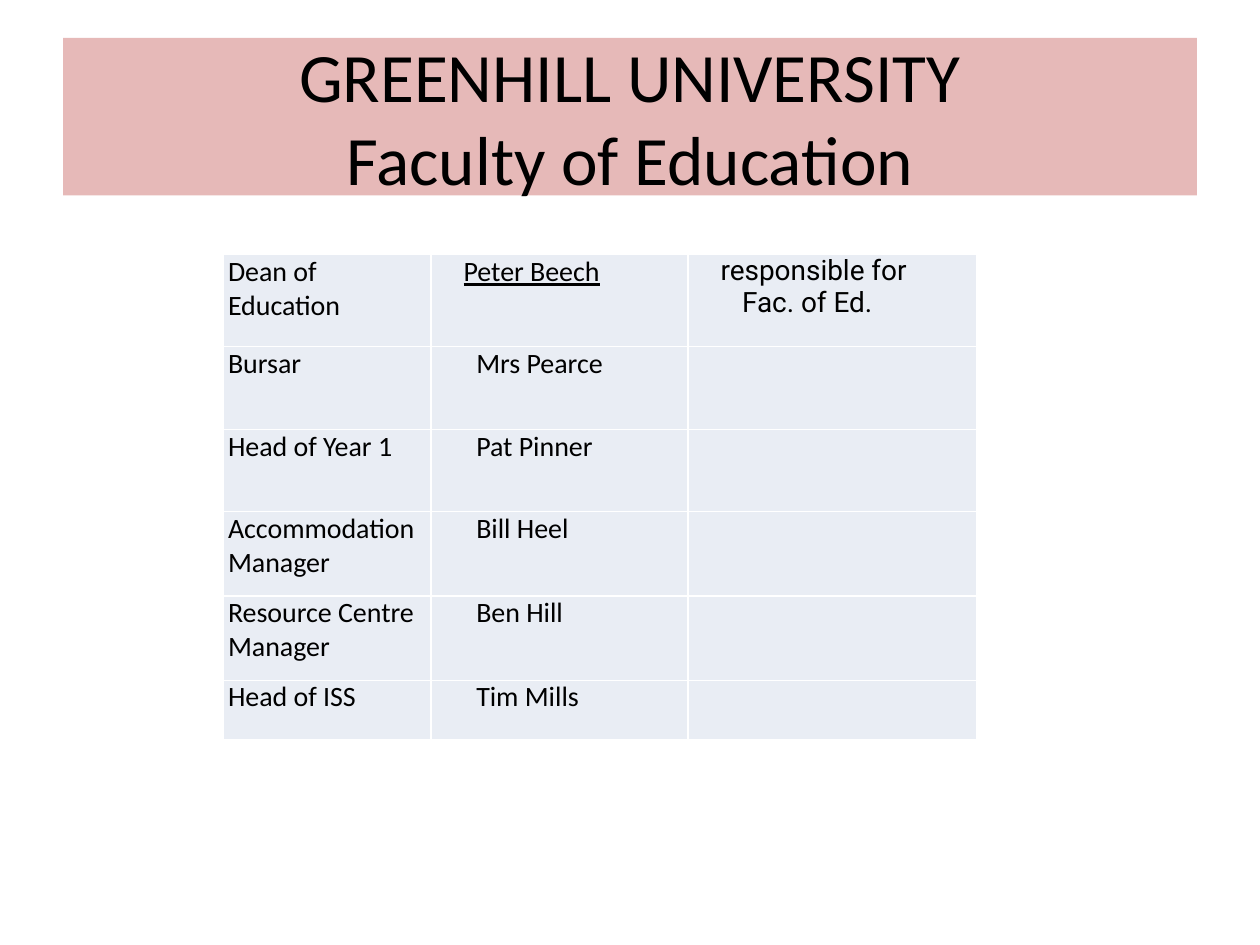
from dataclasses import dataclass

from pptx import Presentation
from pptx.dml.color import RGBColor
from pptx.enum.text import MSO_ANCHOR, MSO_AUTO_SIZE, PP_ALIGN
from pptx.util import Inches, Pt


@dataclass(frozen=True)
class Theme:
    banner: RGBColor = RGBColor.from_string("E6B9B8")
    cell: RGBColor = RGBColor.from_string("E9EDF4")
    ink: RGBColor = RGBColor.from_string("000000")
    font: str = "Calibri"
    note_font: str = "Roboto"
    title_size: float = 39.6
    cell_size: float = 16


THEME = Theme()
TITLE = "GREENHILL UNIVERSITY\vFaculty of Education"
STAFF = [
    ("Dean of Education", "Peter Beech"),
    ("Bursar", "Mrs Pearce"),
    ("Head of Year 1", "Pat Pinner"),
    ("Accommodation Manager", "Bill Heel"),
    ("Resource Centre Manager", "Ben Hill"),
    ("Head of ISS", "Tim Mills"),
]
DEAN_NOTE = [("responsible for", 0.25), ("Fac. of Ed.", 0.42)]
COLUMN_WIDTHS = [1.65, 2.04, 2.29]
ROW_HEIGHTS = [0.73, 0.66, 0.65, 0.67, 0.67, 0.47]
ROLE_INDENT, DEAN_INDENT, NAME_INDENT = 0.03, 0.25, 0.35


def style(paragraph, size, font=THEME.font):
    paragraph.font.name = font
    paragraph.font.size = Pt(size)
    paragraph.font.color.rgb = THEME.ink


def add_title(page):
    title = page.shapes.title
    title.left, title.top = Inches(0.5), Inches(0.3)
    title.width, title.height = Inches(9), Inches(1.25)
    title.fill.solid()
    title.fill.fore_color.rgb = THEME.banner
    frame = title.text_frame
    frame.text = TITLE
    frame.auto_size = MSO_AUTO_SIZE.NONE
    frame.vertical_anchor = MSO_ANCHOR.MIDDLE
    paragraph = frame.paragraphs[0]
    paragraph.alignment = PP_ALIGN.CENTER
    style(paragraph, THEME.title_size)


def write_cell(cell, lines, font=THEME.font):
    """Write (text, indent in inches) pairs, one paragraph each."""
    frame = cell.text_frame
    frame.text = "\n".join(text for text, _ in lines)
    for paragraph, (_, indent) in zip(frame.paragraphs, lines):
        paragraph._p.get_or_add_pPr().set("marL", str(Inches(indent)))
        style(paragraph, THEME.cell_size, font)


def add_staff_table(page):
    table = page.shapes.add_table(
        len(STAFF), len(COLUMN_WIDTHS), Inches(1.77), Inches(2.02),
        Inches(sum(COLUMN_WIDTHS)), Inches(sum(ROW_HEIGHTS))).table
    table.first_row = table.horz_banding = False
    for column, width in zip(table.columns, COLUMN_WIDTHS):
        column.width = Inches(width)
    for row, height in zip(table.rows, ROW_HEIGHTS):
        row.height = Inches(height)
    for cell in table.iter_cells():
        cell.fill.solid()
        cell.fill.fore_color.rgb = THEME.cell
        cell.margin_left = cell.margin_right = Inches(0.01)
        cell.margin_top = cell.margin_bottom = 0
    for index, (role, name) in enumerate(STAFF):
        write_cell(table.cell(index, 0), [(role, ROLE_INDENT)])
        write_cell(table.cell(index, 1),
                   [(name, NAME_INDENT if index else DEAN_INDENT)])
    table.cell(0, 1).text_frame.paragraphs[0].runs[0].font.underline = True
    write_cell(table.cell(0, 2), DEAN_NOTE, THEME.note_font)


def main():
    deck = Presentation()
    deck.slide_width, deck.slide_height = Inches(10), Inches(7.5)
    page = deck.slides.add_slide(deck.slide_layouts.get_by_name("Title Only"))
    add_title(page)
    add_staff_table(page)
    deck.save("out.pptx")


if __name__ == "__main__":
    main()
